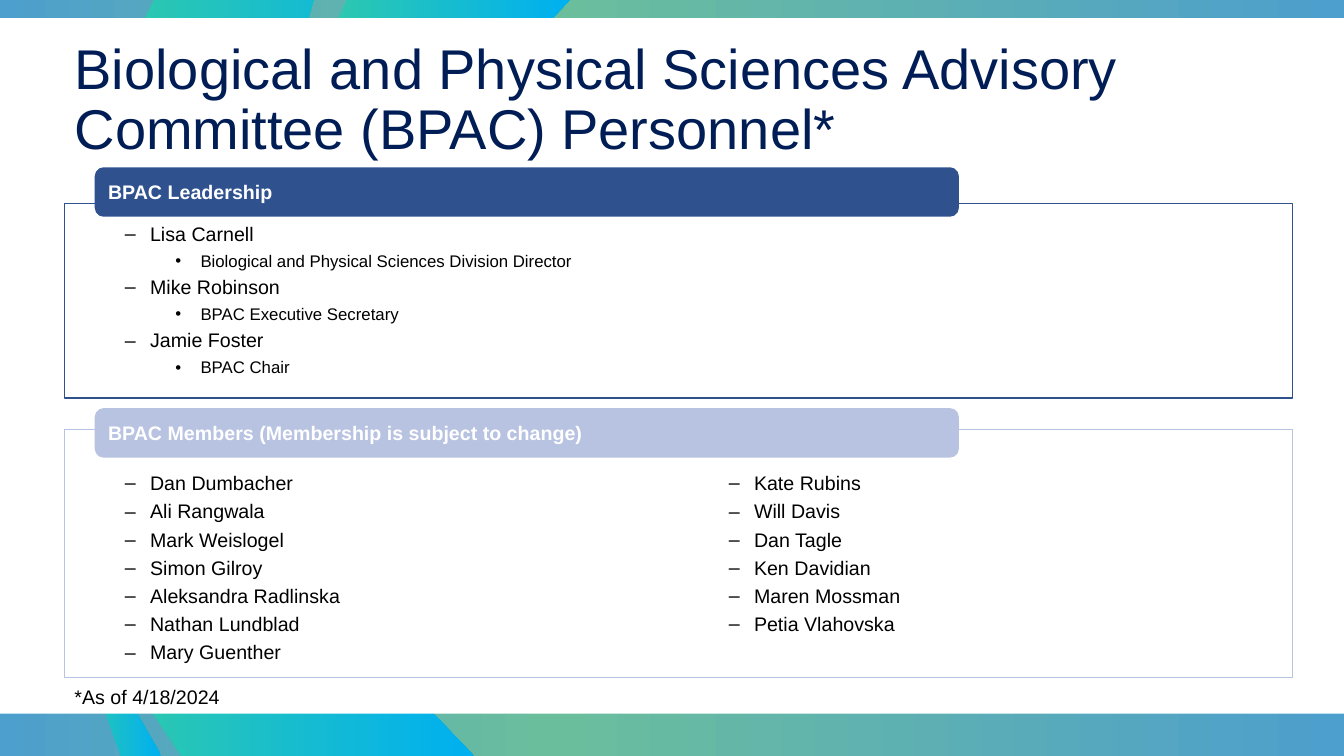
from dataclasses import dataclass

from lxml.etree import SubElement
from pptx import Presentation
from pptx.dml.color import RGBColor
from pptx.enum.shapes import MSO_SHAPE as Preset
from pptx.enum.text import MSO_ANCHOR as Anchor, PP_ALIGN as Align
from pptx.oxml.ns import qn
from pptx.util import Pt

PX = 9144  # EMU per px, 100 px to the inch
FONT = "Arial"
COLORS = {
    "navy": "001D56", "black": "000000", "white": "FFFFFF",
    "leadership": "2F528F", "members": "B8C2E1",
    "sky": "4D9FCD", "green": "6BBE9C", "teal": "36CDA2", "cyan": "00B0F0",
}
SLIDE_W, SLIDE_H = 1333, 750
BAND_STOPS = [(0, "sky"), (41, "green"), (100, "sky")]
RIBBON_STOPS = [(0, "teal"), (100, "cyan")]
LEVEL_BULLETS = {1: "‒", 2: "•"}
LEVEL_SIZES = {1: 14, 2: 12}


@dataclass
class Box:
    left: int
    top: int
    width: int
    height: int

    def emu(self) -> list[int]:
        return [v * PX for v in (self.left, self.top, self.width, self.height)]


@dataclass
class Section:
    heading: str
    color: str
    frame: Box
    tab_top: int


@dataclass
class Item:
    text: str
    level: int = 1


# Content
LEADERSHIP = Section("BPAC Leadership", "leadership", Box(64, 202, 1218, 193), 167)
MEMBERS = Section("BPAC Members (Membership is subject to change)", "members",
                  Box(64, 426, 1218, 246), 406)
LEADERS = [
    ("Lisa Carnell", "Biological and Physical Sciences Division Director"),
    ("Mike Robinson", "BPAC Executive Secretary"),
    ("Jamie Foster", "BPAC Chair"),
]
MEMBER_COLUMNS = [
    ["Dan Dumbacher", "Ali Rangwala", "Mark Weislogel", "Simon Gilroy",
     "Aleksandra Radlinska", "Nathan Lundblad", "Mary Guenther"],
    ["Kate Rubins", "Will Davis", "Dan Tagle", "Ken Davidian",
     "Maren Mossman", "Petia Vlahovska"],
]
# Each ribbon is a list of closed outlines
RIBBONS = [
    [[(565, 0), (548, 18), (372, 307), (283, 307), (336, 18), (344, 0)]],
    [[(160, 750), (136, 708), (64, 530), (105, 708), (120, 750)]],
    [[(180, 750), (152, 708), (69, 494), (305, 494), (430, 708), (470, 750)],
     [(58, 306), (144, 18), (153, 0), (311, 0), (306, 18), (265, 306)]],
]


def rgb(name: str) -> RGBColor:
    return RGBColor.from_string(COLORS[name])


def fill_gradient(shape, stops: list[tuple[int, str]]) -> None:
    shape.shadow.inherit = False
    shape.line.fill.background()
    shape.fill.gradient()
    shape.fill.gradient_angle = 0
    stop_list = shape.element.spPr.find(qn("a:gradFill")).find(qn("a:gsLst"))
    for old_stop in list(stop_list):
        stop_list.remove(old_stop)
    for percent, name in stops:
        stop = SubElement(stop_list, qn("a:gs"), pos=str(percent * 1000))
        SubElement(stop, qn("a:srgbClr"), val=COLORS[name])


def add_block(shapes, preset: Preset, box: Box, fill: str, line: str = "", weight: float = 1):
    block = shapes.add_shape(preset, *box.emu())
    block.shadow.inherit = False
    block.fill.solid()
    block.fill.fore_color.rgb = rgb(fill)
    if line:
        block.line.color.rgb = rgb(line)
        block.line.width = Pt(weight)
    else:
        block.line.fill.background()
    block.text_frame.vertical_anchor = Anchor.MIDDLE
    return block


def add_ribbon(shapes, outlines: list[list[tuple[int, int]]]) -> None:
    builder = shapes.build_freeform(*outlines[0][0], scale=PX)
    for number, outline in enumerate(outlines):
        if number:
            builder.move_to(*outline[0])
        builder.add_line_segments(outline[1:], close=True)
    fill_gradient(builder.convert_to_shape(), RIBBON_STOPS)


def style(paragraph, size: int, color: str, bold: bool = False) -> None:
    paragraph.alignment = Align.LEFT
    for run in paragraph.runs:
        run.font.name = FONT
        run.font.size = Pt(size)
        run.font.bold = bold
        run.font.color.rgb = rgb(color)


def write_list(frame, items: list[Item]) -> None:
    frame.word_wrap = True
    frame.text = "\n".join(item.text for item in items)
    for number, (paragraph, item) in enumerate(zip(frame.paragraphs, items)):
        paragraph.level = item.level
        paragraph.line_spacing = 0.9
        if number:
            paragraph.space_before = Pt(5)
        props = paragraph._p.get_or_add_pPr()
        props.set("marL", str((25 + 50 * item.level) * PX))
        props.set("indent", str(-25 * PX))
        SubElement(props, qn("a:buFont"), typeface=FONT)
        SubElement(props, qn("a:buChar"), char=LEVEL_BULLETS[item.level])
        style(paragraph, LEVEL_SIZES[item.level], "black")


def add_section(shapes, section: Section):
    frame = add_block(shapes, Preset.RECTANGLE, section.frame, "white", section.color)
    tab = add_block(shapes, Preset.ROUNDED_RECTANGLE, Box(95, section.tab_top, 855, 47),
                    section.color, section.color, 1.5)
    tab.text_frame.text = section.heading
    style(tab.text_frame.paragraphs[0], 14, "white", bold=True)
    return frame


def main() -> None:
    deck = Presentation()
    deck.slide_width, deck.slide_height = SLIDE_W * PX, SLIDE_H * PX
    slide = deck.slides.add_slide(deck.slide_layouts[5])
    shapes = slide.shapes

    # Colour bands above and below the white page
    band = add_block(shapes, Preset.RECTANGLE, Box(0, 0, SLIDE_W, SLIDE_H), "sky")
    fill_gradient(band, BAND_STOPS)
    for outlines in RIBBONS:
        add_ribbon(shapes, outlines)
    add_block(shapes, Preset.RECTANGLE, Box(0, 18, SLIDE_W, 690), "white")

    # Title, brought in front of the page
    title = shapes.title
    title.element.getparent().append(title.element)
    title.left, title.top, title.width, title.height = Box(64, 35, 1218, 131).emu()
    title.text_frame.text = "Biological and Physical Sciences Advisory Committee (BPAC) Personnel*"
    title.text_frame.word_wrap = True
    title.text_frame.vertical_anchor = Anchor.MIDDLE
    title.text_frame.paragraphs[0].line_spacing = 0.9
    style(title.text_frame.paragraphs[0], 40, "navy")

    # Leadership
    leadership = add_section(shapes, LEADERSHIP)
    write_list(leadership.text_frame,
               [item for name, role in LEADERS for item in (Item(name), Item(role, 2))])

    # Members in two columns
    add_section(shapes, MEMBERS)
    for number, names in enumerate(MEMBER_COLUMNS):
        column = shapes.add_textbox(*Box(64 + 599 * number, 470, 599, 200).emu())
        column.text_frame.margin_top = 0
        write_list(column.text_frame, [Item(name) for name in names])

    # Footnote
    footnote = shapes.add_textbox(*Box(64, 675, 1218, 34).emu())
    footnote.text_frame.word_wrap = True
    footnote.text_frame.text = "*As of 4/18/2024"
    style(footnote.text_frame.paragraphs[0], 14, "black")

    deck.save("out.pptx")


if __name__ == "__main__":
    main()
